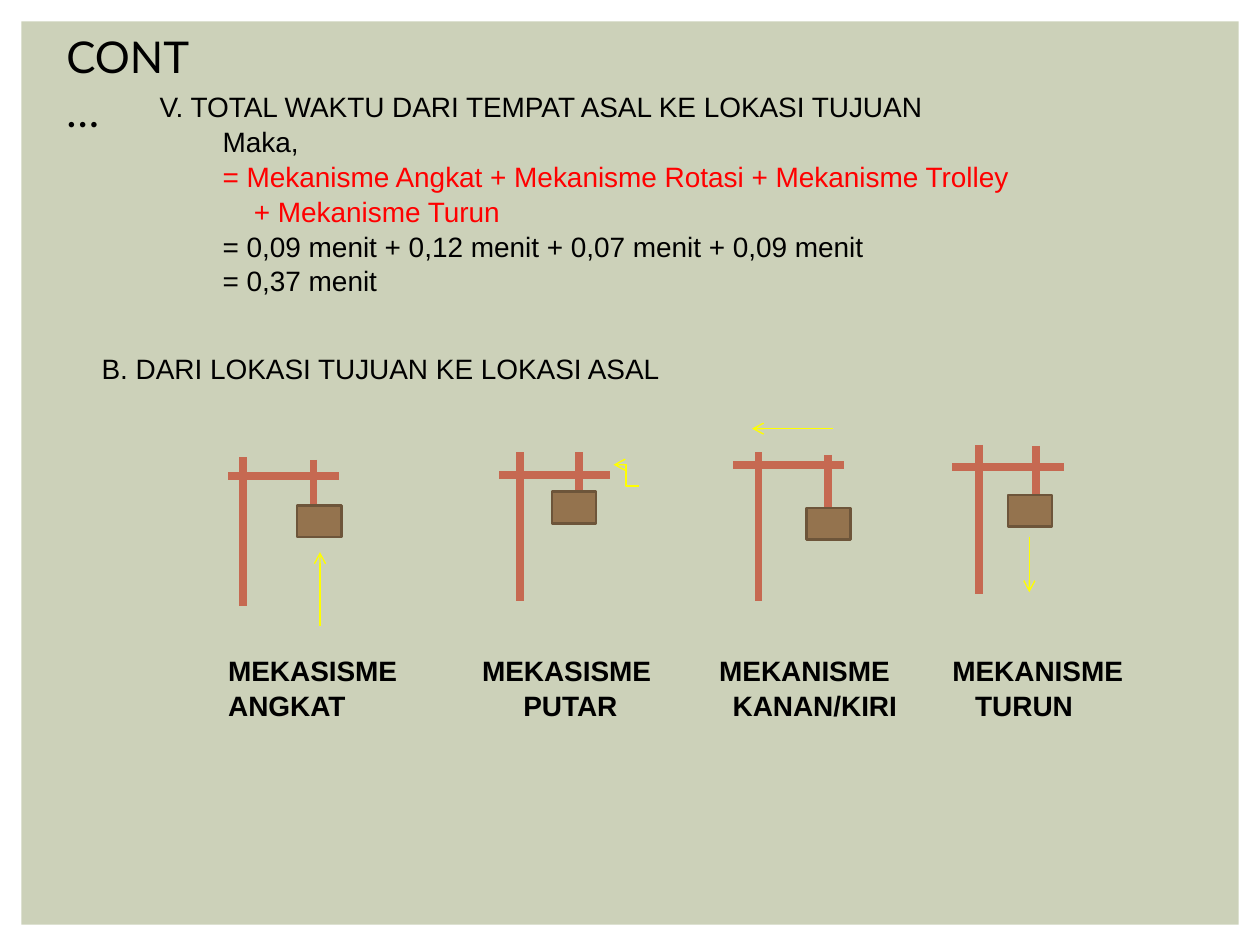
from dataclasses import dataclass

from lxml import etree
from pptx import Presentation
from pptx import util as u
from pptx.dml.color import RGBColor
from pptx.enum import shapes, text
from pptx.oxml import ns


@dataclass(frozen=True)
class Theme:
    panel: str = "CCD1B9"
    ink: str = "000000"
    formula: str = "FF0000"
    steel: str = "C66951"
    load: str = "94734E"
    load_edge: str = "6D553A"
    motion: str = "FFFF00"
    title_font: str = "Lato"
    body_font: str = "Arial"
    title_size: float = 25
    body_size: float = 16
    steel_width: float = 4.5
    edge_width: float = 1.5
    motion_width: float = 0.8
    line_spacing: float = 1.04


THEME = Theme()

# Calculation lines: wording, indent in cm, colour
CALCULATION = [
    ("V. TOTAL WAKTU DARI TEMPAT ASAL KE LOKASI TUJUAN", 0, THEME.ink),
    ("Maka,", 1.27, THEME.ink),
    ("= Mekanisme Angkat + Mekanisme Rotasi + Mekanisme Trolley", 1.27, THEME.formula),
    ("+ Mekanisme Turun", 1.9, THEME.formula),
    ("= 0,09 menit + 0,12 menit + 0,07 menit + 0,09 menit", 1.27, THEME.ink),
    ("= 0,37 menit", 1.27, THEME.ink),
]

# Cranes: top of mast, left of beam, top of rope, corner of load (cm)
CRANES = [
    ((4.9, 9.22), (4.6, 9.6), (6.32, 9.27), (5.99, 10.19)),
    ((10.49, 9.12), (10.06, 9.58), (11.68, 9.12), (11.13, 9.91)),
    ((15.29, 9.12), (14.78, 9.37), (16.69, 9.17), (16.26, 10.24)),
    ((19.74, 8.97), (19.2, 9.41), (20.88, 8.99), (20.32, 9.98)),
]
MAST_HEIGHT, BEAM_LENGTH, ROPE_LENGTH = 3, 2.24, 1.26
LOAD_SIZE = (0.89, 0.64)

# Motion arrows: start, end, connector kind
STRAIGHT, ELBOW = shapes.MSO_CONNECTOR.STRAIGHT, shapes.MSO_CONNECTOR.ELBOW
MOTIONS = [
    ((6.45, 12.62), (6.45, 11.13), STRAIGHT),
    ((12.88, 9.8), (12.37, 9.37), ELBOW),
    ((16.79, 8.64), (15.16, 8.64), STRAIGHT),
    ((20.75, 10.82), (20.75, 11.94), STRAIGHT),
]

# Labels: left edge, first line, second line, indent of second line
LABELS = [
    (4.35, "MEKASISME", "ANGKAT", 0),
    (9.47, "MEKASISME", "PUTAR", 0.83),
    (14.25, "MEKANISME", "KANAN/KIRI", 0.27),
    (18.95, "MEKANISME", "TURUN", 0.46),
]
LABEL_TOP = 13.03


def color(value):
    return RGBColor.from_string(value)


def add_text(page, area, lines, font=THEME.body_font, size=THEME.body_size, bold=False):
    """Text box; each line is (wording, indent in cm, colour)."""
    box = page.shapes.add_textbox(*map(u.Cm, area))
    frame = box.text_frame
    frame.word_wrap = True
    frame.text = "\n".join(wording for wording, _, _ in lines)
    for para, (_, indent, ink) in zip(frame.paragraphs, lines):
        para.alignment = text.PP_ALIGN.JUSTIFY
        para.line_spacing = THEME.line_spacing
        if indent:
            para._p.get_or_add_pPr().set("marL", str(u.Cm(indent)))
        for span in para.runs:
            span.font.name = font
            span.font.size = u.Pt(size)
            span.font.bold = bold
            span.font.color.rgb = color(ink)


def add_rectangle(page, area, fill, edge=None):
    box = page.shapes.add_shape(shapes.MSO_SHAPE.RECTANGLE, *map(u.Cm, area))
    box.shadow.inherit = False
    box.fill.solid()
    box.fill.fore_color.rgb = color(fill)
    if edge:
        box.line.color.rgb = color(edge)
        box.line.width = u.Pt(THEME.edge_width)
    else:
        box.line.fill.background()


def add_line(page, start, end, ink, width, kind=STRAIGHT, arrow=False):
    line = page.shapes.add_connector(kind, *map(u.Cm, start + end))
    line.line.color.rgb = color(ink)
    line.line.width = u.Pt(width)
    if arrow:
        outline = line.line._get_or_add_ln()
        etree.SubElement(outline, ns.qn("a:tailEnd"), type="arrow")
    etree.SubElement(line._element.spPr, ns.qn("a:effectLst"))


def add_crane(page, mast, beam, rope, load):
    bars = [
        (mast, (mast[0], mast[1] + MAST_HEIGHT)),
        (beam, (beam[0] + BEAM_LENGTH, beam[1])),
        (rope, (rope[0], rope[1] + ROPE_LENGTH)),
    ]
    for start, end in bars:
        add_line(page, start, end, THEME.steel, THEME.steel_width)
    add_rectangle(page, load + LOAD_SIZE, THEME.load, THEME.load_edge)


def main():
    deck = Presentation()
    deck.slide_width, deck.slide_height = u.Cm(25.4), u.Cm(19.05)
    page = deck.slides.add_slide(deck.slide_layouts[6])

    # Background panel
    add_rectangle(page, (0.43, 0.43, 24.54, 18.21), THEME.panel)

    # Title, calculation and section heading
    add_text(page, (1.09, 0.43, 3.4, 1.32), [("CONT…", 0, THEME.ink)],
             THEME.title_font, THEME.title_size)
    add_text(page, (2.97, 1.65, 22.4, 4.37), CALCULATION)
    add_text(page, (1.8, 6.93, 22.4, 0.95),
             [("B. DARI LOKASI TUJUAN KE LOKASI ASAL", 0, THEME.ink)])

    # Cranes with their motion arrows
    for crane, (start, end, kind) in zip(CRANES, MOTIONS):
        add_crane(page, *crane)
        add_line(page, start, end, THEME.motion, THEME.motion_width, kind, arrow=True)

    # Mechanism labels
    for left, first, second, indent in LABELS:
        add_text(page, (left, LABEL_TOP, 4.4, 1.62),
                 [(first, 0, THEME.ink), (second, indent, THEME.ink)], bold=True)

    deck.save("out.pptx")


if __name__ == "__main__":
    main()
